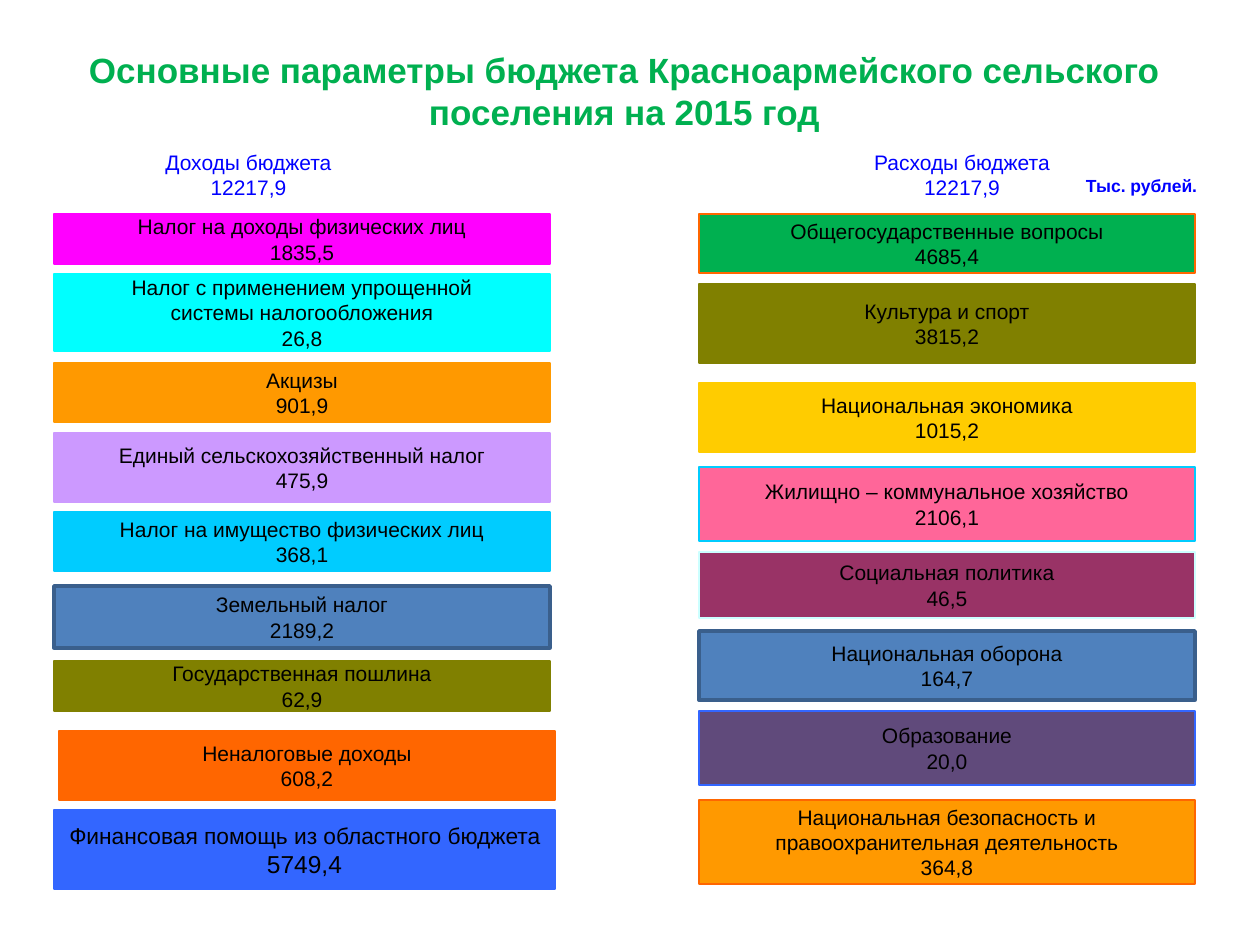
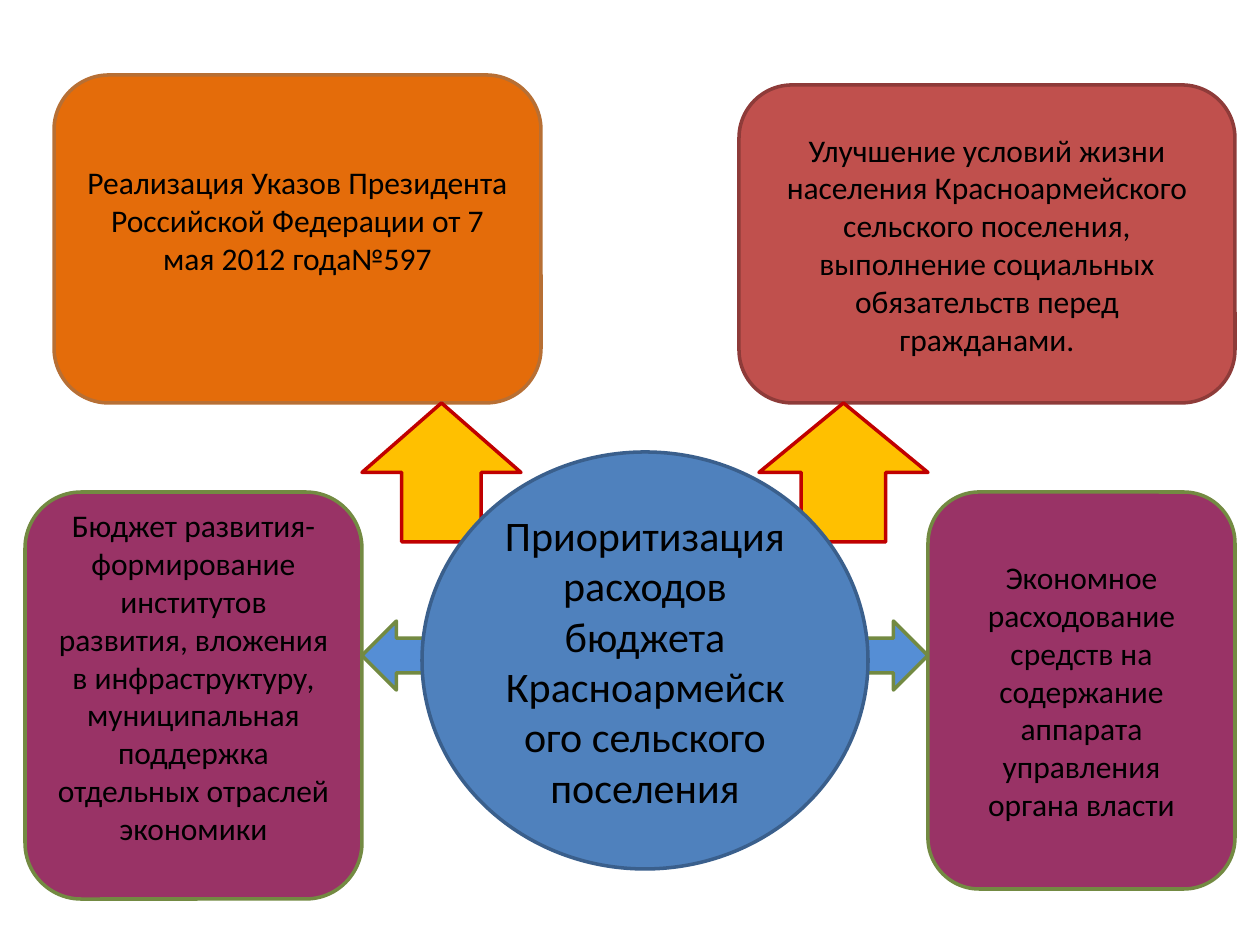
"""Build two slides on the budget of a rural settlement: its figures and its priorities."""
from pptx import Presentation
from pptx.dml.color import RGBColor
from pptx.enum.shapes import MSO_SHAPE
from pptx.enum.text import MSO_ANCHOR, PP_ALIGN
from pptx.util import Pt

RECTANGLE, ROUNDED, OVAL = MSO_SHAPE.RECTANGLE, MSO_SHAPE.ROUNDED_RECTANGLE, MSO_SHAPE.OVAL
LEFT_ARROW, RIGHT_ARROW, UP_ARROW = MSO_SHAPE.LEFT_ARROW, MSO_SHAPE.RIGHT_ARROW, MSO_SHAPE.UP_ARROW
CENTER, MIDDLE = PP_ALIGN.CENTER, MSO_ANCHOR.MIDDLE

PIXEL = 914400 / 126
SLIDE_SIZE = (1260, 945)
THIN, THICK = 0.75, 2
COLORS = {
    "black": "000000", "white": "FFFFFF", "green": "00B050", "blue": "0000FF",
    "magenta": "FF00FF", "cyan": "00FFFF", "orange": "FF9900", "lilac": "CC99FF",
    "sky": "00CCFF", "steel": "4F81BD", "steel_dark": "3A5F8C", "olive": "808000",
    "flame": "FF6600", "royal": "3366FF", "gold": "FFCC00", "pink": "FF6699",
    "plum": "993366", "ice": "CCFFFF", "violet": "604A7B", "pumpkin": "E46C0A",
    "pumpkin_dark": "B76F34", "moss": "738A42", "brick": "C0504D",
    "brick_dark": "8E3B39", "arrow_blue": "558ED5", "amber": "FFC000", "red": "C00000",
}

TABLE_FONT = {"name": "Arial", "size": 12, "color": "black"}
HEADER_FONT = {**TABLE_FONT, "color": "blue"}
UNIT_FONT = {**HEADER_FONT, "size": 10, "bold": True}
TITLE_FONT = {**TABLE_FONT, "size": 20, "color": "green", "bold": True}
PRIORITY_FONT = {"name": "Calibri", "size": 18, "color": "black"}
CENTER_FONT = {**PRIORITY_FONT, "size": 24}

TITLE = "Основные параметры бюджета Красноармейского сельского поселения на 2015 год"
TITLE_BOX = (34, 35, 1181, 110)
UNIT = "Тыс. рублей."
UNIT_BOX = (1067, 165, 149, 40)
HEADERS = [
    (["Доходы бюджета", "12217,9"], (105, 145, 287, 59)),
    (["Расходы бюджета", "12217,9"], (828, 145, 268, 59)),
]
BAR_WIDTH = 496
INCOME_LEFT, EXPENSE_LEFT = 54, 699

# Each row: lines, top, height, fill, line colour
INCOME = [
    (["Налог на доходы физических лиц", "1835,5"], 214, 50, "magenta", "magenta"),
    (["Налог с применением упрощенной", "системы налогообложения", "26,8"],
     274, 77, "cyan", "cyan"),
    (["Акцизы", "901,9"], 363, 59, "orange", "orange"),
    (["Единый сельскохозяйственный налог", "475,9"], 433, 69, "lilac", "lilac"),
    (["Налог на имущество физических лиц", "368,1"], 512, 59, "sky", "sky"),
    (["Земельный налог", "2189,2"], 586, 62, "steel", "steel_dark"),
    (["Государственная пошлина", "62,9"], 661, 50, "olive", "olive"),
]
EXPENSES = [
    (["Общегосударственные вопросы", "4685,4"], 214, 59, "green", "flame"),
    (["Культура и спорт", "3815,2"], 284, 79, "olive", "olive"),
    (["Национальная экономика", "1015,2"], 383, 69, "gold", "gold"),
    (["Жилищно – коммунальное хозяйство", "2106,1"], 467, 74, "pink", "sky"),
    (["Социальная политика", "46,5"], 552, 66, "plum", "ice"),
    (["Национальная оборона", "164,7"], 631, 69, "steel", "steel_dark"),
    (["Образование", "20,0"], 711, 74, "violet", "royal"),
    (["Национальная безопасность и", "правоохранительная деятельность", "364,8"],
     800, 84, "orange", "flame"),
]
OTHER_INCOME = (["Неналоговые доходы", "608,2"], (59, 731, BAR_WIDTH, 69))
AID = (["Финансовая помощь из областного бюджета", "5749,4"], (54, 810, 501, 79))
AID_SIZES = [13, 14]

# Each priority: text, box, fill, line colour, bottom inset
PRIORITIES = [
    ("Реализация Указов Президента Российской Федерации от 7 мая 2012 года№597",
     (54, 75, 487, 328), "pumpkin", "pumpkin_dark", 44),
    ("Бюджет развития-формирование институтов развития, вложения в инфраструктуру, "
     "муниципальная поддержка отдельных отраслей экономики",
     (25, 492, 337, 407), "plum", "moss", 44),
    ("Экономное расходование средств на содержание аппарата управления органа власти",
     (928, 492, 307, 397), "plum", "moss", 6),
    ("Улучшение условий жизни населения Красноармейского сельского поселения, "
     "выполнение социальных обязательств перед гражданами.",
     (739, 85, 496, 318), "brick", "brick_dark", 6),
]
ARROWS = [
    (LEFT_ARROW, (362, 621, 69, 69), "arrow_blue", "moss"),
    (RIGHT_ARROW, (859, 621, 69, 69), "arrow_blue", "moss"),
    (UP_ARROW, (362, 403, 159, 139), "amber", "red"),
    (UP_ARROW, (759, 403, 169, 139), "amber", "red"),
]
FOCUS = ["Приоритизация", "расходов", "бюджета", "Красноармейского сельского поселения"]
FOCUS_BOX = (422, 452, 446, 417)


def px(value):
    return int(value * PIXEL)


def rgb(name):
    return RGBColor.from_string(COLORS[name])


def write(shape, lines, font, wrap=True, sizes=None, bottom=6):
    frame = shape.text_frame
    layout = {"word_wrap": wrap, "vertical_anchor": MIDDLE, "margin_bottom": px(bottom)}
    for key, value in layout.items():
        setattr(frame, key, value)
    for index, line in enumerate(lines):
        paragraph = frame.add_paragraph() if index else frame.paragraphs[0]
        paragraph.alignment = CENTER
        run = paragraph.add_run()
        run.text = line
        size = sizes[index] if sizes else font["size"]
        values = {"name": font["name"], "size": Pt(size), "bold": font.get("bold", False)}
        for key, value in values.items():
            setattr(run.font, key, value)
        run.font.color.rgb = rgb(font["color"])


def add_block(slide, kind, box, fill, line, width=THIN):
    shape = slide.shapes.add_shape(kind, *map(px, box))
    shape.shadow.inherit = False
    if fill:
        shape.fill.solid()
        shape.fill.fore_color.rgb = rgb(fill)
    else:
        shape.fill.background()
    shape.line.color.rgb = rgb(line)
    shape.line.width = Pt(width)
    return shape


def add_bar(slide, lines, box, fill, line, font=TABLE_FONT, sizes=None):
    width = THICK if line == "steel_dark" else THIN
    shape = add_block(slide, RECTANGLE, box, fill, line, width)
    write(shape, lines, font, wrap=False, sizes=sizes)


def build_budget(slide):
    title = slide.shapes.add_textbox(*map(px, TITLE_BOX))
    write(title, [TITLE], TITLE_FONT)
    for lines, box in HEADERS:
        add_bar(slide, lines, box, "white", "white", HEADER_FONT)
    for left, rows in ((INCOME_LEFT, INCOME), (EXPENSE_LEFT, EXPENSES)):
        for lines, top, height, fill, line in rows:
            add_bar(slide, lines, (left, top, BAR_WIDTH, height), fill, line)
    add_bar(slide, *OTHER_INCOME, "flame", "flame")
    add_bar(slide, *AID, "royal", "royal", sizes=AID_SIZES)
    add_bar(slide, [UNIT], UNIT_BOX, None, "white", UNIT_FONT)


def build_priorities(slide):
    for text, box, fill, line, bottom in PRIORITIES:
        shape = add_block(slide, ROUNDED, box, fill, line, THICK)
        write(shape, [text], PRIORITY_FONT, bottom=bottom)
    for kind, box, fill, line in ARROWS:
        add_block(slide, kind, box, fill, line, THICK)
    focus = add_block(slide, OVAL, FOCUS_BOX, "steel", "steel_dark", THICK)
    write(focus, FOCUS, CENTER_FONT)


def main():
    presentation = Presentation()
    presentation.slide_width, presentation.slide_height = map(px, SLIDE_SIZE)
    blank = presentation.slide_layouts[6]
    for build in (build_budget, build_priorities):
        build(presentation.slides.add_slide(blank))
    presentation.save("out.pptx")


if __name__ == "__main__":
    main()
